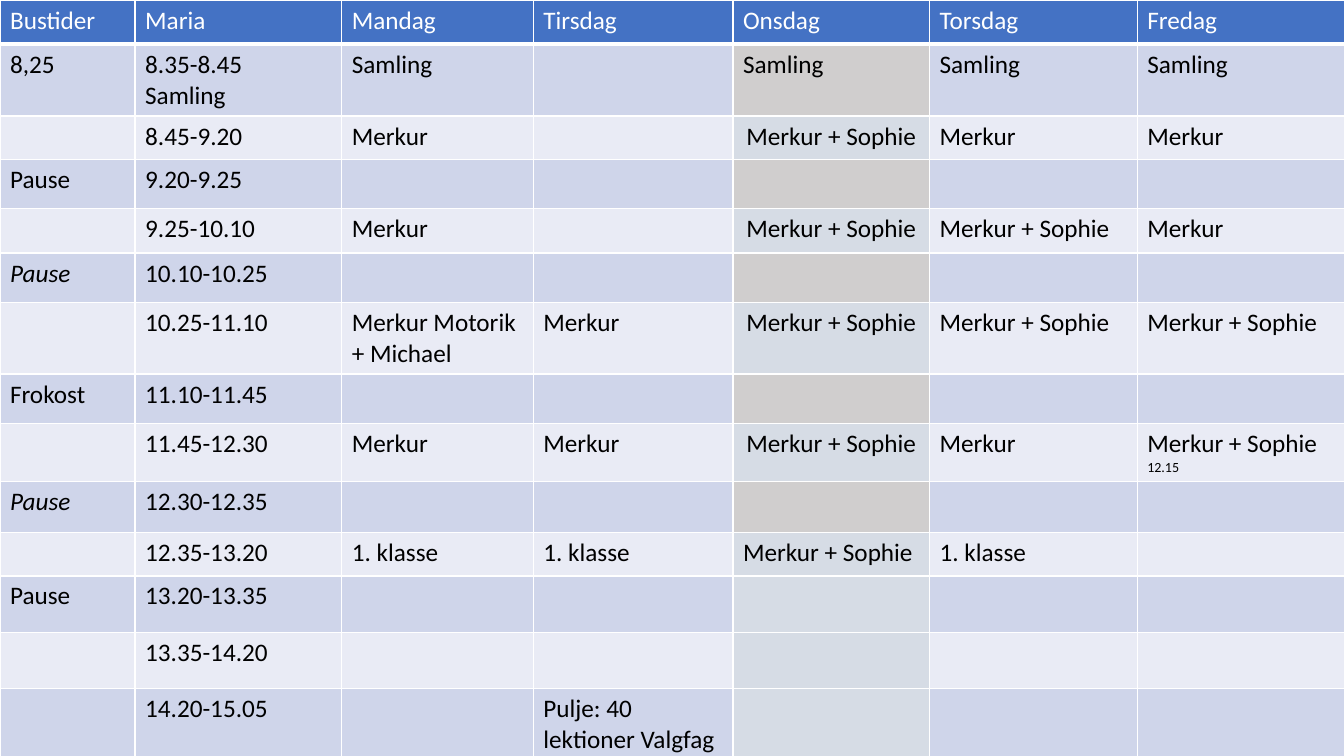
from lxml.etree import SubElement
from pptx import Presentation
from pptx.dml.color import RGBColor
from pptx.enum.text import PP_ALIGN
from pptx.oxml.ns import qn
from pptx.util import Inches, Pt

HEADER_BLUE = RGBColor(0x44, 0x72, 0xC4)
BAND_DARK = RGBColor(0xCF, 0xD5, 0xEA)
BAND_LIGHT = RGBColor(0xE9, 0xEB, 0xF5)
ONSDAG_GREY = RGBColor(0xD0, 0xCE, 0xCE)
ONSDAG_BLUE = RGBColor(0xD6, 0xDC, 0xE5)
WHITE = RGBColor(0xFF, 0xFF, 0xFF)
BLACK = RGBColor(0, 0, 0)

BOTH = "Merkur + Sophie"
ONSDAG, FREDAG = 4, 6
LUNCH_LESSON, LAST_GREY_PAUSE = 8, 9
ITALIC_PAUSES = (5, 9)

timetable = [
    ["Bustider", "Maria", "Mandag", "Tirsdag", "Onsdag", "Torsdag", "Fredag"],
    ["8,25", "8.35-8.45\nSamling", "Samling", "", "Samling", "Samling", "Samling"],
    ["", "8.45-9.20", "Merkur", "", BOTH, "Merkur", "Merkur"],
    ["Pause", "9.20-9.25", "", "", "", "", ""],
    ["", "9.25-10.10", "Merkur", "", BOTH, BOTH, "Merkur"],
    ["Pause", "10.10-10.25", "", "", "", "", ""],
    ["", "10.25-11.10", "Merkur Motorik + Michael", "Merkur", BOTH, BOTH, BOTH],
    ["Frokost", "11.10-11.45", "", "", "", "", ""],
    ["", "11.45-12.30", "Merkur", "Merkur", BOTH, "Merkur", BOTH + " "],
    ["Pause", "12.30-12.35", "", "", "", "", ""],
    ["", "12.35-13.20", "1. klasse", "1. klasse", BOTH, "1. klasse", ""],
    ["Pause", "13.20-13.35", "", "", "", "", ""],
    ["", "13.35-14.20", "", "", "", "", ""],
    ["", "14.20-15.05", "", "Pulje: 40 lektioner Valgfag", "", "", ""],
]
column_widths = [1.34, 2.05, 1.9, 1.98, 1.95, 2.06, 2.06]
row_heights = [0.44, 0.71, 0.43, 0.49, 0.44, 0.49, 0.71,
               0.49, 0.57, 0.51, 0.43, 0.56, 0.56, 0.69]


def add_white_borders(cell, bottom_width):
    cell_format = cell._tc.get_or_add_tcPr()
    for side, width in (("L", 1), ("R", 1), ("T", 1), ("B", bottom_width)):
        line = SubElement(cell_format, qn(f"a:ln{side}"), w=str(Pt(width)))
        line_fill = SubElement(line, qn("a:solidFill"))
        SubElement(line_fill, qn("a:srgbClr"), val=str(WHITE))


def band_color(row, column):
    if row == 0:
        return HEADER_BLUE
    is_dark = row % 2 == 1
    if column == ONSDAG:
        return ONSDAG_GREY if is_dark and row <= LAST_GREY_PAUSE else ONSDAG_BLUE
    return BAND_DARK if is_dark else BAND_LIGHT


prs = Presentation()
prs.slide_width, prs.slide_height = Inches(13.33), Inches(7.5)
slide = prs.slides.add_slide(prs.slide_layouts[6])
schedule = slide.shapes.add_table(
    len(timetable), len(column_widths), 0, 0,
    prs.slide_width, Inches(sum(row_heights))).table

for column, width in zip(schedule.columns, column_widths):
    column.width = Inches(width)
for row, height in zip(schedule.rows, row_heights):
    row.height = Inches(height)

for r, entries in enumerate(timetable):
    for c, entry in enumerate(entries):
        cell = schedule.cell(r, c)
        add_white_borders(cell, 3 if r == 0 else 1)
        cell.fill.solid()
        cell.fill.fore_color.rgb = band_color(r, c)
        cell.text = entry
        if (r, c) == (LUNCH_LESSON, FREDAG):
            cell.text_frame.paragraphs[0].add_run().text = "12.15"
        font_format = {"name": "Calibri", "size": Pt(18), "bold": False,
                       "italic": c == 0 and r in ITALIC_PAUSES}
        for paragraph in cell.text_frame.paragraphs:
            if c == ONSDAG and entry == BOTH and r <= LUNCH_LESSON:
                paragraph.alignment = PP_ALIGN.CENTER
            for run in paragraph.runs:
                for attribute, value in font_format.items():
                    setattr(run.font, attribute, value)
                run.font.color.rgb = WHITE if r == 0 else BLACK
                if run.text == "12.15":
                    run.font.size = Pt(10)

prs.save("out.pptx")
